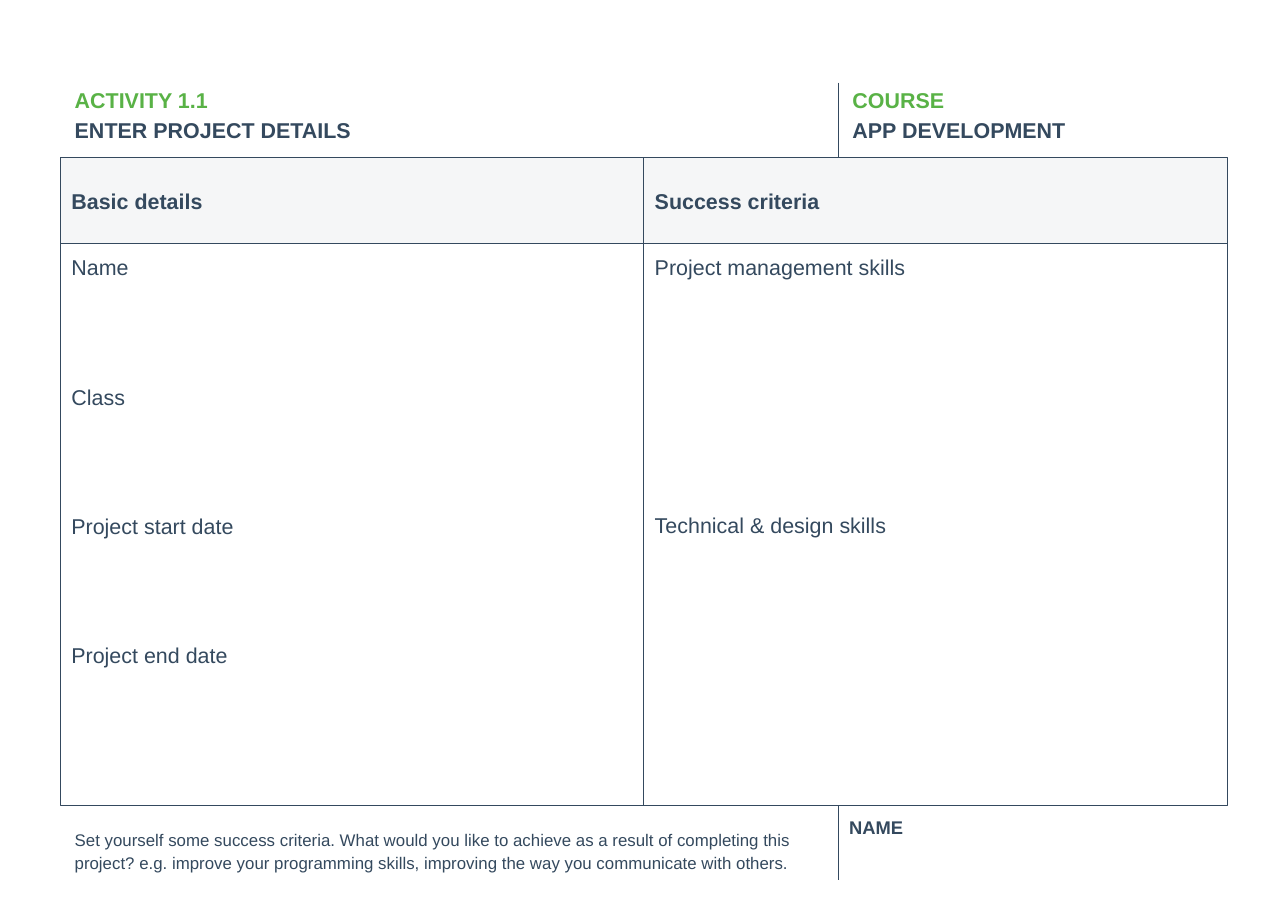
from pptx import Presentation
from pptx.dml.color import RGBColor
from pptx.enum import shapes, text
from pptx.oxml.ns import qn
from pptx.util import Pt
from lxml import etree

NAVY = RGBColor(0x34, 0x49, 0x5E)
GREEN = RGBColor(0x59, 0xB2, 0x46)
PALE = RGBColor(0xF5, 0xF6, 0xF7)

# Page grid, in points
LEFT, DIVIDER, RIGHT = 39.6, 547.8, 802
HEAD_TOP, TABLE_TOP, BODY_TOP, TABLE_BOTTOM = 44.6, 103, 159, 526.4
COL_W = (RIGHT - LEFT) / 2
BAND_H = 58.4
TICK_H = 49
NARROW, WIDE = 7.2, 9.2


def add_text(tf, lines, *, size=14, bold=False, colors=(NAVY,), inset=NARROW,
             anchor=text.MSO_ANCHOR.TOP, spacing=1.0, gap=0):
    """Fill a frame with one paragraph per line; colors repeat down the lines."""
    tf.word_wrap = True
    tf.auto_size = text.MSO_AUTO_SIZE.NONE
    tf.vertical_anchor = anchor
    tf.margin_left = tf.margin_right = Pt(inset)
    tf.margin_top = tf.margin_bottom = Pt(inset)
    for i, line in enumerate(lines):
        p = tf.paragraphs[0] if i == 0 else tf.add_paragraph()
        p.alignment = text.PP_ALIGN.LEFT
        p.line_spacing = spacing
        p.space_before = Pt(gap if i else 0)
        p.space_after = Pt(0)
        r = p.add_run()
        r.text = line
        r.font.name = "Arial"
        r.font.size = Pt(size)
        r.font.bold = bold
        r.font.color.rgb = colors[i % len(colors)]


def place(sp, x, y, w, h):
    sp.left, sp.top, sp.width, sp.height = Pt(x), Pt(y), Pt(w), Pt(h)


def add_rule(slide, x1, y1, x2, y2):
    line = slide.shapes.add_connector(
        shapes.MSO_CONNECTOR.STRAIGHT, Pt(x1), Pt(y1), Pt(x2), Pt(y2))
    line.line.color.rgb = NAVY
    line.line.width = Pt(0.75)
    etree.SubElement(line._element.spPr, qn("a:effectLst"))


def add_box(slide, x, y, h, lines, fill=None, **fmt):
    sp = slide.shapes.add_shape(
        shapes.MSO_SHAPE.RECTANGLE, Pt(x), Pt(y), Pt(COL_W), Pt(h))
    sp.shadow.inherit = False
    if fill is None:
        sp.fill.background()
    else:
        sp.fill.solid()
        sp.fill.fore_color.rgb = fill
    sp.line.color.rgb = NAVY
    sp.line.width = Pt(0.75)
    add_text(sp.text_frame, lines, **fmt)


def add_label(slide, x, y, w, h, lines, **fmt):
    sp = slide.shapes.add_textbox(Pt(x), Pt(y), Pt(w), Pt(h))
    add_text(sp.text_frame, lines, **fmt)


def main():
    prs = Presentation()
    prs.slide_width, prs.slide_height = Pt(841.7), Pt(595.4)
    slide = prs.slides.add_slide(prs.slide_layouts[0])
    middle = text.MSO_ANCHOR.MIDDLE

    # Heading: activity and course
    title, course = slide.placeholders
    place(title, LEFT, HEAD_TOP, DIVIDER - LEFT, BAND_H)
    place(course, DIVIDER, HEAD_TOP, RIGHT - DIVIDER, BAND_H)
    headings = ((title, ["ACTIVITY 1.1", "ENTER PROJECT DETAILS"]),
                (course, ["COURSE", "APP DEVELOPMENT"]))
    for sp, lines in headings:
        add_text(sp.text_frame, lines, bold=True, colors=(GREEN, NAVY),
                 inset=WIDE, anchor=middle, spacing=1.15)

    # Page rules
    for y in (TABLE_TOP, TABLE_BOTTOM):
        add_rule(slide, LEFT, y, RIGHT, y)
    for y in (TABLE_TOP - TICK_H, TABLE_BOTTOM):
        add_rule(slide, DIVIDER, y, DIVIDER, y + TICK_H)

    # Two columns, each with a header and a writing area
    columns = (
        ("Basic details",
         ["Name", "Class", "Project start date", "Project end date"], 67.7),
        ("Success criteria",
         ["Project management skills", "Technical & design skills"], 151.8),
    )
    for i, (header, prompts, gap) in enumerate(columns):
        x = LEFT + i * COL_W
        add_box(slide, x, TABLE_TOP, BODY_TOP - TABLE_TOP, [header],
                fill=PALE, bold=True, anchor=middle)
        add_box(slide, x, BODY_TOP, TABLE_BOTTOM - BODY_TOP, prompts, gap=gap)

    # Footer: instructions and name field
    add_label(slide, LEFT, TABLE_BOTTOM, DIVIDER - LEFT, BAND_H,
              ["Set yourself some success criteria. What would you like to "
               "achieve as a result of completing this project? e.g. improve "
               "your programming skills, improving the way you communicate "
               "with others."],
              size=11, inset=WIDE, anchor=middle, spacing=1.15)
    add_label(slide, DIVIDER, TABLE_BOTTOM, RIGHT - DIVIDER, BAND_H,
              ["NAME"], size=12, bold=True)

    prs.save("out.pptx")


if __name__ == "__main__":
    main()
